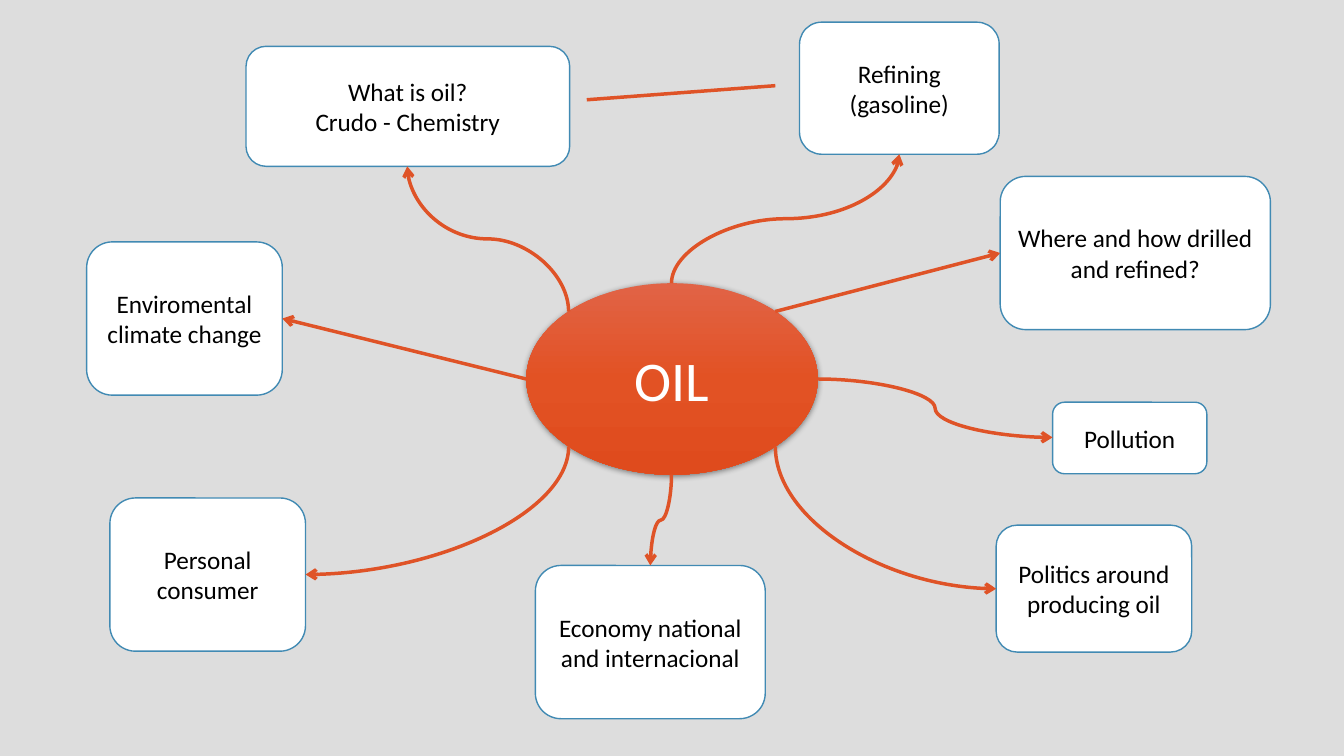
from copy import deepcopy
from dataclasses import dataclass
from math import sqrt
from typing import Optional

from lxml.etree import SubElement
from pptx import Presentation
from pptx.dml.color import RGBColor
from pptx.enum.shapes import MSO_CONNECTOR, MSO_SHAPE
from pptx.enum.text import MSO_ANCHOR, PP_ALIGN
from pptx.oxml.ns import qn
from pptx.util import Pt

PX = 9144  # EMU per px, 100 px to the inch
FONT = "Calibri"
BACKGROUND = RGBColor(0xDD, 0xDD, 0xDD)
WHITE = RGBColor(0xFF, 0xFF, 0xFF)
BLACK = RGBColor(0x00, 0x00, 0x00)
BLUE = RGBColor(0x41, 0x8A, 0xB3)
ORANGE = RGBColor(0xDF, 0x53, 0x27)
OIL_STOPS = [
    (0.0, RGBColor(0xE1, 0x63, 0x46)),
    (0.5, RGBColor(0xE2, 0x52, 0x24)),
    (1.0, RGBColor(0xDF, 0x4B, 0x1D)),
]
DIAG = 1 / sqrt(2)  # 45 degree point of an ellipse
LEFT, RIGHT, TOP, BOTTOM = (-1, 0), (1, 0), (0, -1), (0, 1)
OIL_FORMAT = {"name": FONT, "size": Pt(40)}
TOPIC_FORMAT = {"name": FONT, "size": Pt(18)}


@dataclass(frozen=True)
class Node:
    x: int
    y: int
    w: int
    h: int
    lines: tuple[str, ...]

    def site(self, side: tuple[float, float]) -> tuple[int, int]:
        """Point on the outline, given as offsets in half widths and heights."""
        return (round(self.x + self.w / 2 * (1 + side[0])),
                round(self.y + self.h / 2 * (1 + side[1])))


@dataclass(frozen=True)
class Branch:
    topic: Node
    start: tuple[float, float]
    end: tuple[float, float]
    preset: str = "line"
    upright: bool = False  # the curve leaves the oval vertically


OIL = Node(522, 281, 289, 190, ("OIL",))
BRANCHES = [
    Branch(Node(86, 240, 194, 152, ("Enviromental climate change",)), LEFT, RIGHT),
    Branch(Node(793, 22, 198, 131, ("Refining", "(gasoline)")),
           TOP, BOTTOM, "curvedConnector3", True),
    Branch(Node(244, 46, 321, 119, ("What is oil?", "Crudo - Chemistry")),
           (-DIAG, -DIAG), BOTTOM, "curvedConnector3", True),
    Branch(Node(988, 521, 194, 126, ("Politics around producing oil",)),
           (DIAG, DIAG), LEFT, "curvedConnector2", True),
    Branch(Node(992, 175, 268, 152, ("Where and how drilled and refined?",)),
           (DIAG, -DIAG), LEFT),
    Branch(Node(531, 561, 228, 152, ("Economy national and internacional",)),
           BOTTOM, TOP, "curvedConnector3", True),
    Branch(Node(109, 494, 194, 152, ("Personal consumer",)),
           (-DIAG, DIAG), RIGHT, "curvedConnector2", True),
    Branch(Node(1044, 399, 153, 71, ("Pollution",)), RIGHT, LEFT, "curvedConnector3"),
]


def add_node(slide, node: Node, shape: MSO_SHAPE, fmt: dict, color: RGBColor):
    sp = slide.shapes.add_shape(shape, *(v * PX for v in (node.x, node.y, node.w, node.h)))
    sp.shadow.inherit = False
    tf = sp.text_frame
    tf.word_wrap = True
    tf.vertical_anchor = MSO_ANCHOR.MIDDLE
    for i, line in enumerate(node.lines):
        p = tf.paragraphs[0] if i == 0 else tf.add_paragraph()
        p.alignment = PP_ALIGN.CENTER
        r = p.add_run()
        r.text = line
        for key, value in fmt.items():
            setattr(r.font, key, value)
        r.font.color.rgb = color
    return sp


def add_oil(slide) -> None:
    sp = add_node(slide, OIL, MSO_SHAPE.OVAL, OIL_FORMAT, WHITE)
    sp.line.fill.background()
    sp.fill.gradient()
    sp.fill.gradient_angle = 270
    spPr = sp._element.spPr
    stops = spPr.find(".//" + qn("a:gsLst"))
    stops.append(deepcopy(stops[0]))
    for stop, (position, color) in zip(sp.fill.gradient_stops, OIL_STOPS):
        stop.position = position
        stop.color.rgb = color
    # Soft shadow below the oval
    shadow = SubElement(spPr.find(qn("a:effectLst")), qn("a:outerShdw"), blurRad=str(Pt(4.4)),
                        dist=str(Pt(1.2)), dir="5400000", rotWithShape="0")
    black = SubElement(shadow, qn("a:srgbClr"), val=str(BLACK))
    SubElement(black, qn("a:alpha"), val="45000")


def add_topic(slide, node: Node) -> None:
    sp = add_node(slide, node, MSO_SHAPE.ROUNDED_RECTANGLE, TOPIC_FORMAT, BLACK)
    sp.fill.solid()
    sp.fill.fore_color.rgb = WHITE
    sp.line.color.rgb = BLUE
    sp.line.width = Pt(1)


def add_link(slide, start: tuple[int, int], end: tuple[int, int],
             branch: Optional[Branch] = None) -> None:
    (x1, y1), (x2, y2) = start, end
    kind = MSO_CONNECTOR.STRAIGHT
    if branch and branch.preset != "line":
        kind = MSO_CONNECTOR.CURVE
    if branch and branch.upright:
        # Frame of the curve before its quarter turn about the centre
        cx, cy, dx, dy = (x1 + x2) / 2, (y1 + y2) / 2, (x2 - x1) / 2, (y2 - y1) / 2
        x1, y1, x2, y2 = cx - dy, cy + dx, cx + dy, cy - dx
    cxn = slide.shapes.add_connector(kind, *(round(v * PX) for v in (x1, y1, x2, y2)))
    cxn.line.color.rgb = ORANGE
    cxn.line.width = Pt(2.5)
    spPr = cxn._element.spPr
    if branch:
        spPr.find(qn("a:prstGeom")).set("prst", branch.preset)
        SubElement(spPr.find(qn("a:ln")), qn("a:tailEnd"), type="arrow")
        if branch.upright:
            spPr.find(qn("a:xfrm")).set("rot", "5400000")
    SubElement(spPr, qn("a:effectLst"))


def main() -> None:
    prs = Presentation()
    prs.slide_width, prs.slide_height = 1333 * PX, 750 * PX
    slide = prs.slides.add_slide(prs.slide_layouts[6])
    slide.background.fill.solid()
    slide.background.fill.fore_color.rgb = BACKGROUND

    # Central idea, then each topic with its arrow
    add_oil(slide)
    for branch in BRANCHES:
        add_topic(slide, branch.topic)
        add_link(slide, OIL.site(branch.start), branch.topic.site(branch.end), branch)

    # Plain line between the two upper topics
    add_link(slide, (769, 85), (582, 99))
    prs.save("out.pptx")


if __name__ == "__main__":
    main()
